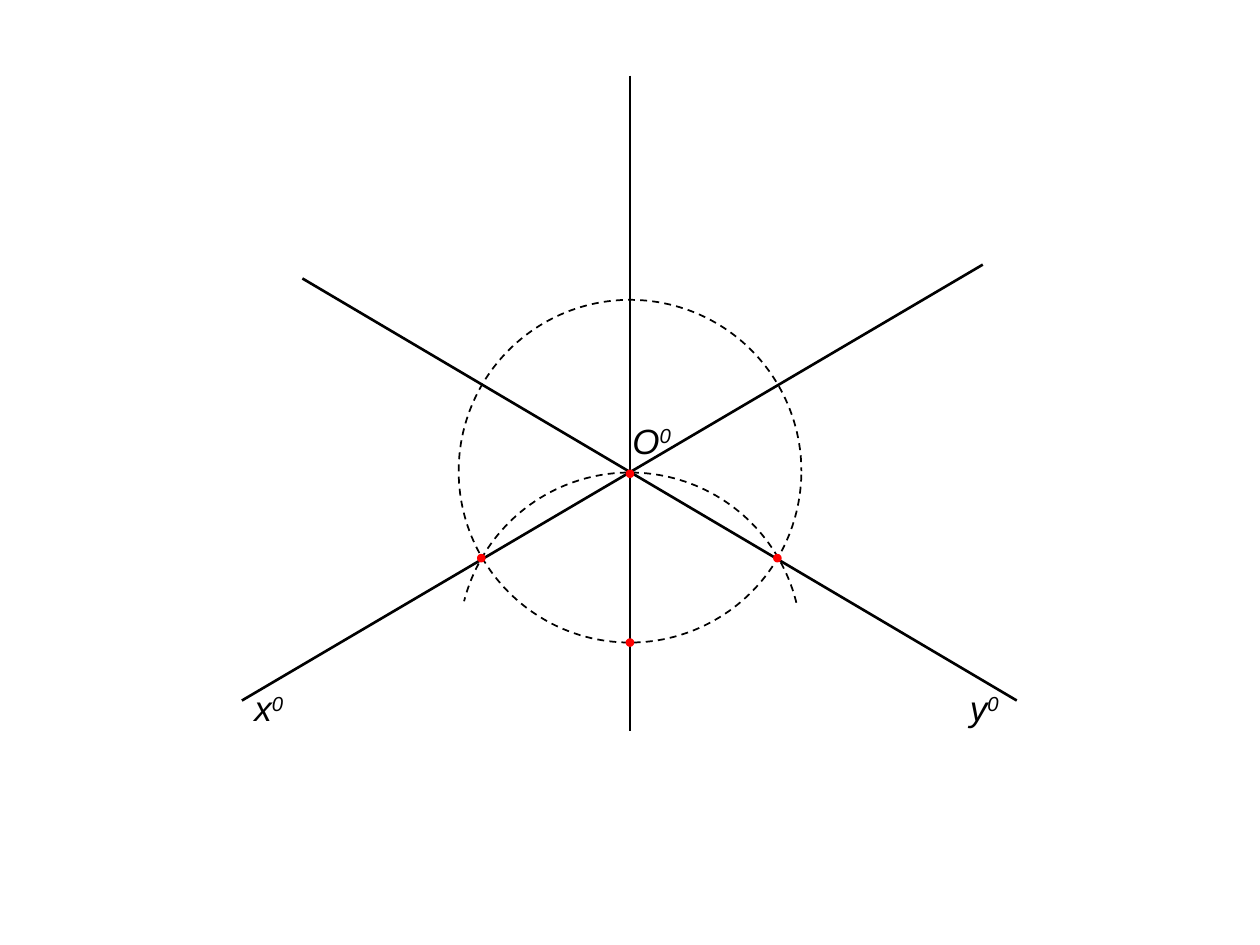
from typing import NamedTuple

from lxml.etree import SubElement
from pptx import Presentation
from pptx.dml.color import RGBColor
from pptx.enum.dml import MSO_LINE_DASH_STYLE as Dash
from pptx.enum.shapes import MSO_CONNECTOR as Connector, MSO_SHAPE as Preset
from pptx.enum.text import MSO_AUTO_SIZE as AutoSize
from pptx.oxml.ns import qn
from pptx.util import Inches, Pt

BLACK = RGBColor(0x00, 0x00, 0x00)
RED = RGBColor(0xFF, 0x00, 0x00)

SLIDE_WIDTH, SLIDE_HEIGHT = Inches(10), Inches(7.5)
COLUMNS, ROWS = 100, 75
CIRCLE_SIZE = 27.2
POINT_SIZE = 0.4
LABEL_WIDTH, LABEL_HEIGHT = 6.3, 4.4
LABEL_FORMAT = {"name": "Arial", "size": Pt(20), "italic": True}


class Axis(NamedTuple):
    start_column: float
    start_row: float
    end_column: float
    end_row: float


class Arc(NamedTuple):
    column: float
    row: float
    start: float
    end: float
    rotation: float = 0
    flipped: bool = False


class Point(NamedTuple):
    column: float
    row: float


class Label(NamedTuple):
    column: float
    row: float
    letter: str
    power: str = "0"


AXES = [
    Axis(19.2, 55.6, 78, 21),
    Axis(24, 22.1, 80.7, 55.6),
    Axis(50, 6, 50, 58),
]
ARCS = [
    Arc(36.4, 23.8, 0.68, 0),
    Arc(36.4, 37.5, 62.33, 153.35, rotation=90, flipped=True),
]
POINTS = [Point(50, 51), Point(50, 37.6), Point(61.7, 44.3), Point(38.2, 44.3)]
LABELS = [Label(19.2, 54, "x"), Label(76, 54, "y"), Label(49.2, 32.8, "О")]


def across(columns: float) -> int:
    return round(SLIDE_WIDTH * columns / COLUMNS)


def down(rows: float) -> int:
    return round(SLIDE_HEIGHT * rows / ROWS)


def box(column: float, row: float, width: float, height: float) -> tuple:
    return across(column), down(row), across(width), down(height)


def style_line(shape, color: RGBColor, width: float) -> None:
    shape.line.color.rgb = color
    shape.line.width = Pt(width)


def draw_axis(slide, axis: Axis) -> None:
    connector = slide.shapes.add_connector(
        Connector.STRAIGHT,
        across(axis.start_column), down(axis.start_row),
        across(axis.end_column), down(axis.end_row),
    )
    style_line(connector, BLACK, 1.5)
    SubElement(connector.element.spPr, qn("a:effectLst"))


def draw_arc(slide, arc: Arc) -> None:
    shape = slide.shapes.add_shape(
        Preset.ARC, *box(arc.column, arc.row, CIRCLE_SIZE, CIRCLE_SIZE)
    )
    shape.adjustments[0], shape.adjustments[1] = arc.start, arc.end
    shape.rotation = arc.rotation
    if arc.flipped:
        shape.element.spPr.get_or_add_xfrm().set("flipV", "1")
    shape.shadow.inherit = False
    shape.fill.background()
    style_line(shape, BLACK, 1)
    shape.line.dash_style = Dash.DASH


def draw_point(slide, point: Point) -> None:
    half = POINT_SIZE / 2
    shape = slide.shapes.add_shape(
        Preset.OVAL,
        *box(point.column - half, point.row - half, POINT_SIZE, POINT_SIZE),
    )
    shape.shadow.inherit = False
    shape.fill.solid()
    shape.fill.fore_color.rgb = RED
    style_line(shape, RED, 2)


def draw_label(slide, label: Label) -> None:
    text_box = slide.shapes.add_textbox(
        *box(label.column, label.row, LABEL_WIDTH, LABEL_HEIGHT)
    )
    frame = text_box.text_frame
    frame.word_wrap = True
    frame.auto_size = AutoSize.SHAPE_TO_FIT_TEXT
    paragraph = frame.paragraphs[0]
    for text in (label.letter, label.power):
        run = paragraph.add_run()
        run.text = text
        for name, value in LABEL_FORMAT.items():
            setattr(run.font, name, value)
        run.font.color.rgb = BLACK
    paragraph.runs[-1].font._element.set("baseline", "30000")


def main() -> None:
    presentation = Presentation()
    presentation.slide_width = SLIDE_WIDTH
    presentation.slide_height = SLIDE_HEIGHT
    slide = presentation.slides.add_slide(presentation.slide_layouts[6])
    for items, draw in (
        (AXES, draw_axis),
        (ARCS, draw_arc),
        (POINTS, draw_point),
        (LABELS, draw_label),
    ):
        for item in items:
            draw(slide, item)
    presentation.save("out.pptx")


if __name__ == "__main__":
    main()
